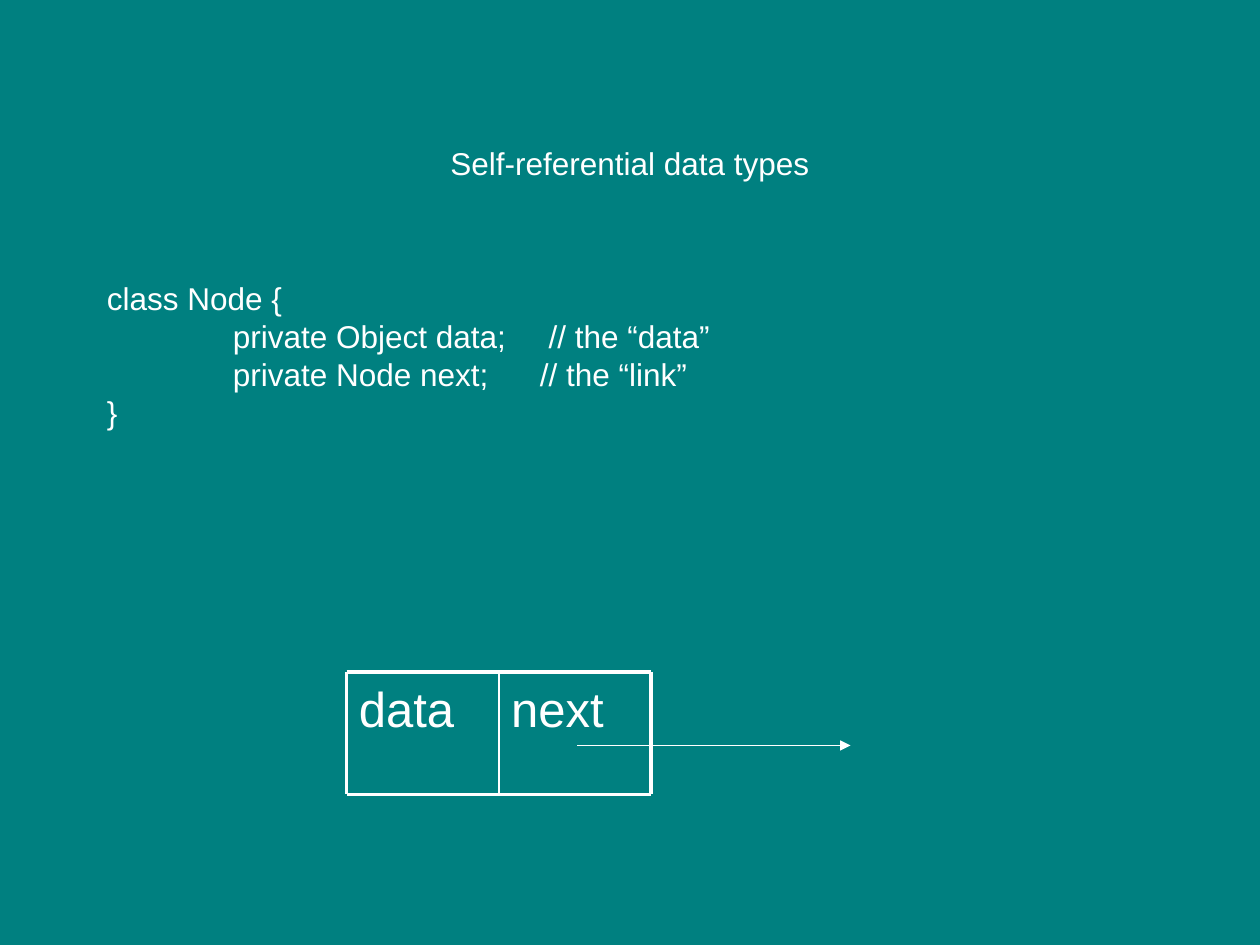
"""Build a slide on self-referential data types with a linked node diagram."""
from lxml.etree import SubElement
from pptx import Presentation
from pptx.dml.color import RGBColor
from pptx.enum.shapes import MSO_CONNECTOR
from pptx.enum.text import MSO_ANCHOR, PP_ALIGN
from pptx.oxml.ns import qn
from pptx.util import Pt

TEAL = RGBColor(0x00, 0x80, 0x80)
WHITE = RGBColor(0xFF, 0xFF, 0xFF)


def add_text(page, lines, left, top, width, height, size=18,
             align=PP_ALIGN.LEFT, anchor=MSO_ANCHOR.TOP):
    box = page.shapes.add_textbox(Pt(left), Pt(top), Pt(width), Pt(height))
    frame = box.text_frame
    frame.word_wrap = True
    frame.vertical_anchor = anchor
    for index, (text, stops) in enumerate(lines):
        para = frame.add_paragraph() if index else frame.paragraphs[0]
        para.alignment = align
        span = para.add_run()
        span.text = text
        span.font.name = "Arial"
        span.font.size = Pt(size)
        span.font.color.rgb = WHITE
        if stops:
            tabs = SubElement(para._p.get_or_add_pPr(), qn("a:tabLst"))
            for stop in stops:
                SubElement(tabs, qn("a:tab"), pos=str(Pt(stop)), algn="l")


def add_line(page, start, end, weight):
    line = page.shapes.add_connector(
        MSO_CONNECTOR.STRAIGHT, *(Pt(value) for value in (*start, *end)))
    line.line.color.rgb = WHITE
    line.line.width = Pt(weight)
    SubElement(line._element.spPr, qn("a:effectLst"))
    return line


deck = Presentation()
deck.slide_width, deck.slide_height = Pt(720), Pt(540)
page = deck.slides.add_slide(deck.slide_layouts[6])
page.background.fill.solid()
page.background.fill.fore_color.rgb = TEAL

add_text(page, [("Self-referential data types", ())], 54, 48, 612, 90,
         align=PP_ALIGN.CENTER, anchor=MSO_ANCHOR.MIDDLE)

code = [
    ("class Node {", ()),
    ("\tprivate Object data;\t// the “data”", (72, 252.5)),
    ("\tprivate Node next;\t// the “link”", (72, 247.5)),
    ("}", ()),
]
add_text(page, code, 54, 156, 612, 348)

node_left, node_top, cell_width, cell_height = 198, 384, 87, 70
node_right = node_left + 2 * cell_width
node_bottom = node_top + cell_height

for column, field in enumerate(("data", "next")):
    add_text(page, [(field, ())], node_left + column * cell_width, node_top,
             cell_width, cell_height, size=28)

for y in (node_top, node_bottom):
    add_line(page, (node_left, y), (node_right, y), 2.25)
for column, weight in enumerate((2.25, 1, 2.25)):
    x = node_left + column * cell_width
    add_line(page, (x, node_top), (x, node_bottom), weight)

link = add_line(page, (330, 426), (486, 426), 0.75)
SubElement(link.line._get_or_add_ln(), qn("a:tailEnd"), type="triangle")

deck.save("out.pptx")
